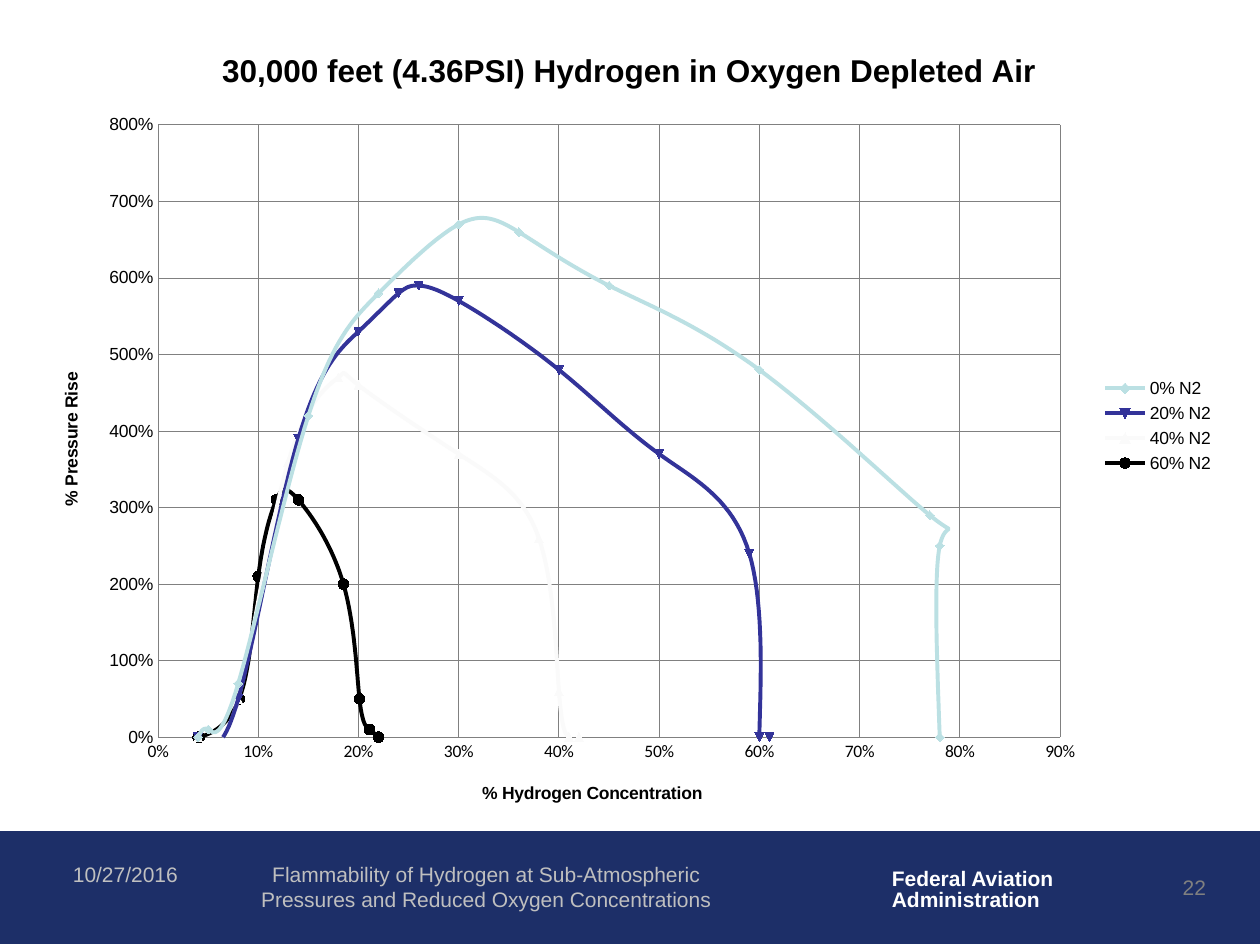
"""Build the hydrogen flammability slide: one smooth scatter chart above a footer band."""
from lxml import etree
from pptx import Presentation
from pptx import util as u
from pptx.chart.data import XyChartData
from pptx.dml.color import RGBColor
from pptx.enum import chart as ch, shapes, text
from pptx.oxml.ns import qn

NAVY = RGBColor(0x1D, 0x2F, 0x68)
BLACK = RGBColor(0, 0, 0)
WHITE = RGBColor(255, 255, 255)
OFF_WHITE = RGBColor(0xFA, 0xFA, 0xFA)
GRID = RGBColor(0x80, 0x80, 0x80)
FOOTER_GREY = RGBColor(0xBF, 0xBF, 0xBF)
DATE_GREY = RGBColor(0xC0, 0xC0, 0xC0)
AQUA = RGBColor(0xBB, 0xE0, 0xE3)
INDIGO = RGBColor(0x33, 0x33, 0x99)

HEADING = "30,000 feet (4.36PSI) Hydrogen in Oxygen Depleted Air"
X_TITLE = "% Hydrogen Concentration"
Y_TITLE = "% Pressure Rise"
MIXTURES = [
    ("0% N2", AQUA, None,
     [0.04, 0.04, 0.05, 0.08, 0.15, 0.22, 0.3, 0.3, 0.36, 0.45, 0.6, 0.77, 0.78, 0.78],
     [0, 0, 0.1, 0.7, 4.2, 5.8, 6.7, 6.7, 6.6, 5.9, 4.8, 2.9, 2.5, 0]),
    ("20% N2", INDIGO, None,
     [0.04, 0.04, 0.08, 0.14, 0.2, 0.24, 0.26, 0.26, 0.3, 0.4, 0.5, 0.59, 0.6, 0.61],
     [0, 0, 0.5, 3.9, 5.3, 5.8, 5.9, 5.9, 5.7, 4.8, 3.7, 2.4, 0, 0]),
    ("40% N2", OFF_WHITE, None,
     [0.04, 0.04, 0.08, 0.13, 0.18, 0.18, 0.2, 0.3, 0.38, 0.4, 0.41, 0.42],
     [0, 0, 0.5, 3.6, 4.7, 4.7, 4.6, 3.7, 2.6, 0.6, 0, 0]),
    ("60% N2", BLACK, ch.XL_MARKER_STYLE.CIRCLE,
     [0.04, 0.041, 0.081, 0.1, 0.118, 0.118, 0.14, 0.185, 0.201, 0.211, 0.22],
     [0, 0, 0.5, 2.1, 3.1, 3.1, 3.1, 2, 0.5, 0.1, 0]),
]
FOOTER = [
    (["22"], (7.59, 6.89, 2.08, 0.5),
     dict(color=GRID, align=text.PP_ALIGN.RIGHT)),
    (["Flammability of Hydrogen at Sub-Atmospheric Pressures and Reduced Oxygen Concentrations"],
     (1.82, 6.79, 4.08, 0.5), dict(color=FOOTER_GREY, align=text.PP_ALIGN.CENTER)),
    (["10/27/2016"], (0.48, 6.79, 1.18, 0.3), dict(color=DATE_GREY)),
    (["Federal Aviation", "Administration"], (6.98, 6.85, 1.5, 0.44),
     dict(color=WHITE, bold=True, spacing=0.85, wrap=False)),
]


def set_font(font, size, color=BLACK, bold=False, name="Arial"):
    font.name, font.size, font.bold = name, u.Pt(size), bold
    font.color.rgb = color


def add_text(slide, lines, place, color, align=text.PP_ALIGN.LEFT, bold=False,
             spacing=None, wrap=True):
    frame = slide.shapes.add_textbox(*map(u.Inches, place)).text_frame
    frame.word_wrap = wrap
    frame.text = "\n".join(lines)
    for line in frame.paragraphs:
        line.alignment, line.line_spacing = align, spacing
        set_font(line.runs[0].font, 12, color, bold)


def place_part(part, x, y, w=None, h=None, inner=False):
    """Give a chart part a fixed position in fractions of the chart."""
    layout = part.find(qn("c:layout"))
    if layout is None:
        layout = etree.Element(qn("c:layout"))
        before = part.find(qn("c:tx"))
        if before is None:
            before = part.find(qn("c:legendPos"))
        if before is None:
            part.insert(0, layout)
        else:
            before.addnext(layout)
    for child in list(layout):
        layout.remove(child)
    manual = etree.SubElement(layout, qn("c:manualLayout"))
    settings = [("layoutTarget", "inner" if inner else None), ("xMode", "edge"),
                ("yMode", "edge"), ("x", x), ("y", y), ("w", w), ("h", h)]
    for tag, value in settings:
        if value is not None:
            etree.SubElement(manual, qn("c:" + tag)).set("val", str(value))


def add_title(owner, words, size, x, y):
    owner.has_title = True
    title = owner.chart_title if hasattr(owner, "chart_title") else owner.axis_title
    title.text_frame.text = words
    set_font(title.text_frame.paragraphs[0].runs[0].font, size, bold=True)
    place_part(title._element, x, y)


def format_axis(axis, top, step, font_name):
    axis.minimum_scale, axis.maximum_scale, axis.major_unit = 0, top, step
    axis.major_tick_mark = axis.minor_tick_mark = ch.XL_TICK_MARK.NONE
    axis.has_major_gridlines = True
    for line in (axis.major_gridlines.format.line, axis.format.line):
        line.color.rgb, line.width = GRID, u.Pt(0.5)
    axis.tick_labels.number_format = "0%"
    axis.tick_labels.number_format_is_linked = False
    set_font(axis.tick_labels.font, 10, name=font_name)


def format_series(series, number, color, marker):
    """Smooth the curve; its number picks the automatic marker."""
    series._element.find(qn("c:idx")).set("val", str(number))
    series._element.find(qn("c:smooth")).set("val", "1")
    series.format.line.color.rgb, series.format.line.width = color, u.Pt(2.25)
    if marker is not None:
        series.marker.style, series.marker.size = marker, 6
    series.marker.format.fill.solid()
    series.marker.format.fill.fore_color.rgb = color
    series.marker.format.line.color.rgb = color


def add_pressure_chart(slide):
    data = XyChartData(number_format="0%")
    for name, _, _, concentrations, rises in MIXTURES:
        series = data.add_series(name)
        for concentration, rise in zip(concentrations, rises):
            series.add_data_point(concentration, rise)
    chart = slide.shapes.add_chart(
        ch.XL_CHART_TYPE.XY_SCATTER_SMOOTH, *map(u.Inches, (0.26, 0.17, 9.47, 6.42)), data).chart
    set_font(chart.font, 10)
    add_title(chart, HEADING, 18, 0.154, 0.028)
    format_axis(chart.category_axis, 0.9, 0.1, "Calibri")
    format_axis(chart.value_axis, 8, 1, "Arial")
    add_title(chart.category_axis, X_TITLE, 10, 0.374, 0.936)
    add_title(chart.value_axis, Y_TITLE, 10, 0.02, 0.43)
    place_part(chart._chartSpace.chart.plotArea, 0.105, 0.128, 0.756, 0.757, inner=True)

    chart.has_legend = True
    chart.legend.position = ch.XL_LEGEND_POSITION.RIGHT
    chart.legend.include_in_layout = False
    set_font(chart.legend.font, 10)
    place_part(chart.legend._element, 0.893, 0.435, 0.1, 0.13)

    chart.plots[0].vary_by_categories = False
    for number, (_, color, marker, _, _) in enumerate(MIXTURES, start=1):
        format_series(chart.plots[0].series[number - 1], number, color, marker)


def main():
    deck = Presentation()
    deck.slide_width, deck.slide_height = u.Inches(10), u.Inches(7.5)
    slide = deck.slides.add_slide(deck.slide_layouts[6])
    band = slide.shapes.add_shape(
        shapes.MSO_SHAPE.RECTANGLE, *map(u.Inches, (0, 6.6, 10, 0.89)))
    band.shadow.inherit = False
    band.fill.solid()
    band.fill.fore_color.rgb = band.line.color.rgb = NAVY
    band.line.width = u.Pt(0.75)
    for lines, place, style in FOOTER:
        add_text(slide, lines, place, **style)
    add_pressure_chart(slide)
    deck.save("out.pptx")


if __name__ == "__main__":
    main()
